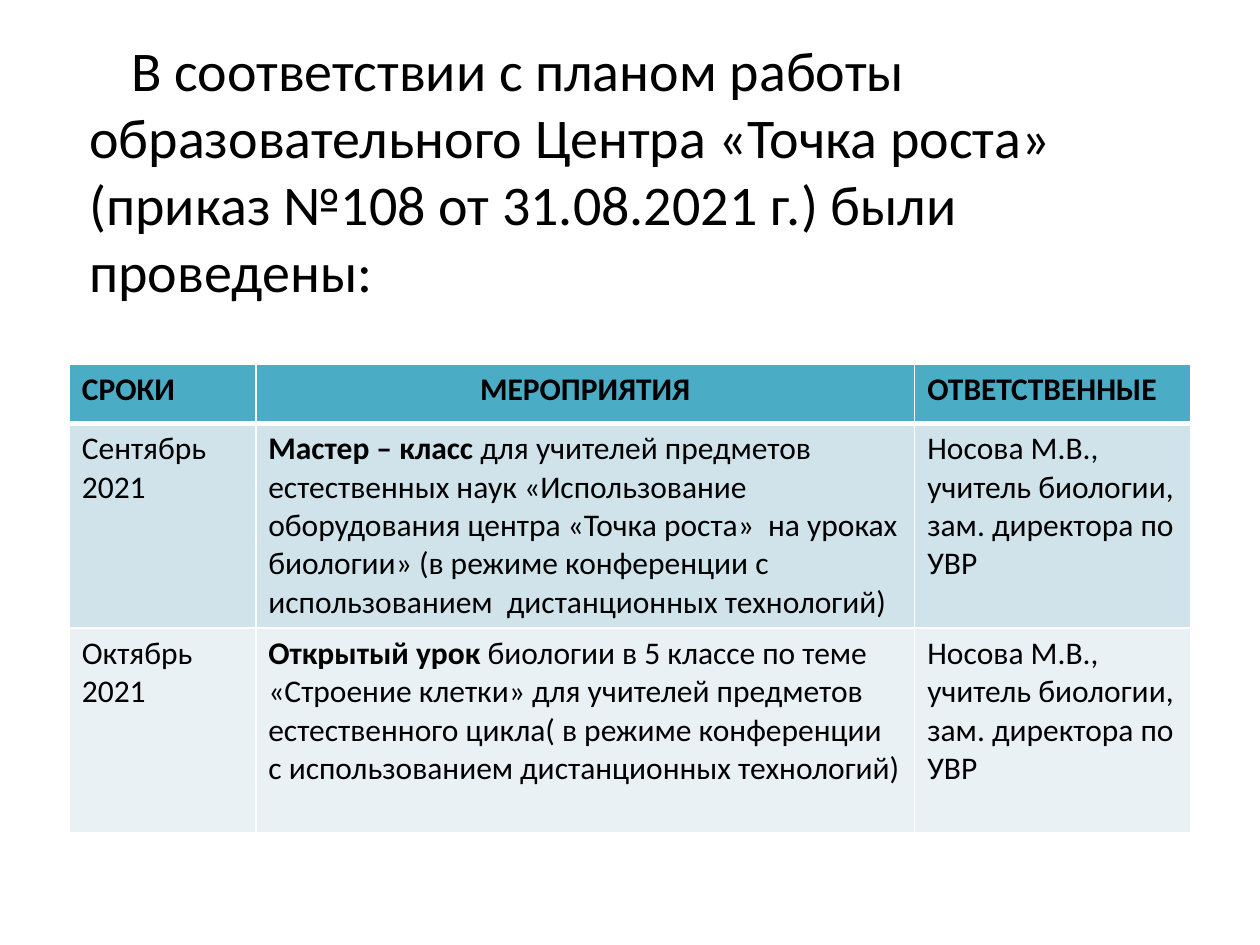
from pptx import Presentation
from pptx.dml.color import RGBColor
from pptx.enum.text import MSO_ANCHOR, MSO_AUTO_SIZE, PP_ALIGN
from pptx.oxml.ns import qn
from pptx.util import Inches, Pt
from lxml.etree import SubElement


def rgb(value):
    return RGBColor.from_string(value)


def add_run(p, text, size, bold=False):
    r = p.add_run()
    r.text = text
    r.font.name = "Calibri"
    r.font.size = Pt(size)
    r.font.bold = bold
    r.font.color.rgb = rgb("000000")


prs = Presentation()
prs.slide_width, prs.slide_height = Inches(10), Inches(7.5)
s = prs.slides.add_slide(prs.slide_layouts[1])
title = s.shapes.title.element
title.getparent().remove(title)

body = s.placeholders[1]
body.left, body.top = Inches(0.23), Inches(0.23)
body.width, body.height = Inches(9.53), Inches(7.03)
tf = body.text_frame
tf.word_wrap = True
tf.auto_size = MSO_AUTO_SIZE.NONE
tf.vertical_anchor = MSO_ANCHOR.TOP
p = tf.paragraphs[0]
p.space_before = Pt(6.4)
pPr = p._p.get_or_add_pPr()
pPr.set("marL", str(Inches(0.38)))
pPr.set("indent", str(Inches(0.33)))
SubElement(pPr, qn("a:buNone"))
add_run(p, "В соответствии с планом работы образовательного Центра "
           "«Точка роста» (приказ №108 от 31.08.2021 г.) были проведены:", 32)

cols = [1.48, 5.23, 2.19]
rows = [0.47, 1.62, 1.62]
fills = ["4BACC6", "D0E3EA", "E9F1F5"]
teacher = "Носова М.В., учитель биологии, зам. директора по УВР"
cells = [
    [[("СРОКИ", True)], [("МЕРОПРИЯТИЯ", True)], [("ОТВЕТСТВЕННЫЕ", True)]],
    [[("Сентябрь 2021", False)],
     [("Мастер – класс ", True),
      ("для учителей предметов естественных наук «Использование оборудования "
       "центра «Точка роста»  на уроках биологии» (в режиме конференции с "
       "использованием  дистанционных технологий)", False)],
     [(teacher, False)]],
    [[("Октябрь 2021", False)],
     [("Открытый урок ", True),
      ("биологии в 5 классе по теме «Строение клетки» для учителей предметов "
       "естественного цикла( в режиме конференции с использованием "
       "дистанционных технологий)", False)],
     [(teacher, False)]],
]

table = s.shapes.add_table(len(rows), len(cols), Inches(0.55), Inches(2.89),
                           Inches(sum(cols)), Inches(sum(rows))).table
for col, width in zip(table.columns, cols):
    col.width = Inches(width)
for row, height in zip(table.rows, rows):
    row.height = Inches(height)

for i, row in enumerate(cells):
    for j, runs in enumerate(row):
        cell = table.cell(i, j)
        p = cell.text_frame.paragraphs[0]
        if (i, j) == (0, 1):
            p.alignment = PP_ALIGN.CENTER
        for text, bold in runs:
            add_run(p, text, 18, bold)
        tcPr = cell._tc.get_or_add_tcPr()
        widths = {"L": 1, "R": 1, "T": 3 if i == 1 else 1, "B": 3 if i == 0 else 1}
        for side, width in widths.items():
            ln = SubElement(tcPr, qn(f"a:ln{side}"), w=str(Pt(width)))
            SubElement(SubElement(ln, qn("a:solidFill")), qn("a:srgbClr"), val="FFFFFF")
        cell.fill.solid()
        cell.fill.fore_color.rgb = rgb(fills[i])

prs.save("out.pptx")
